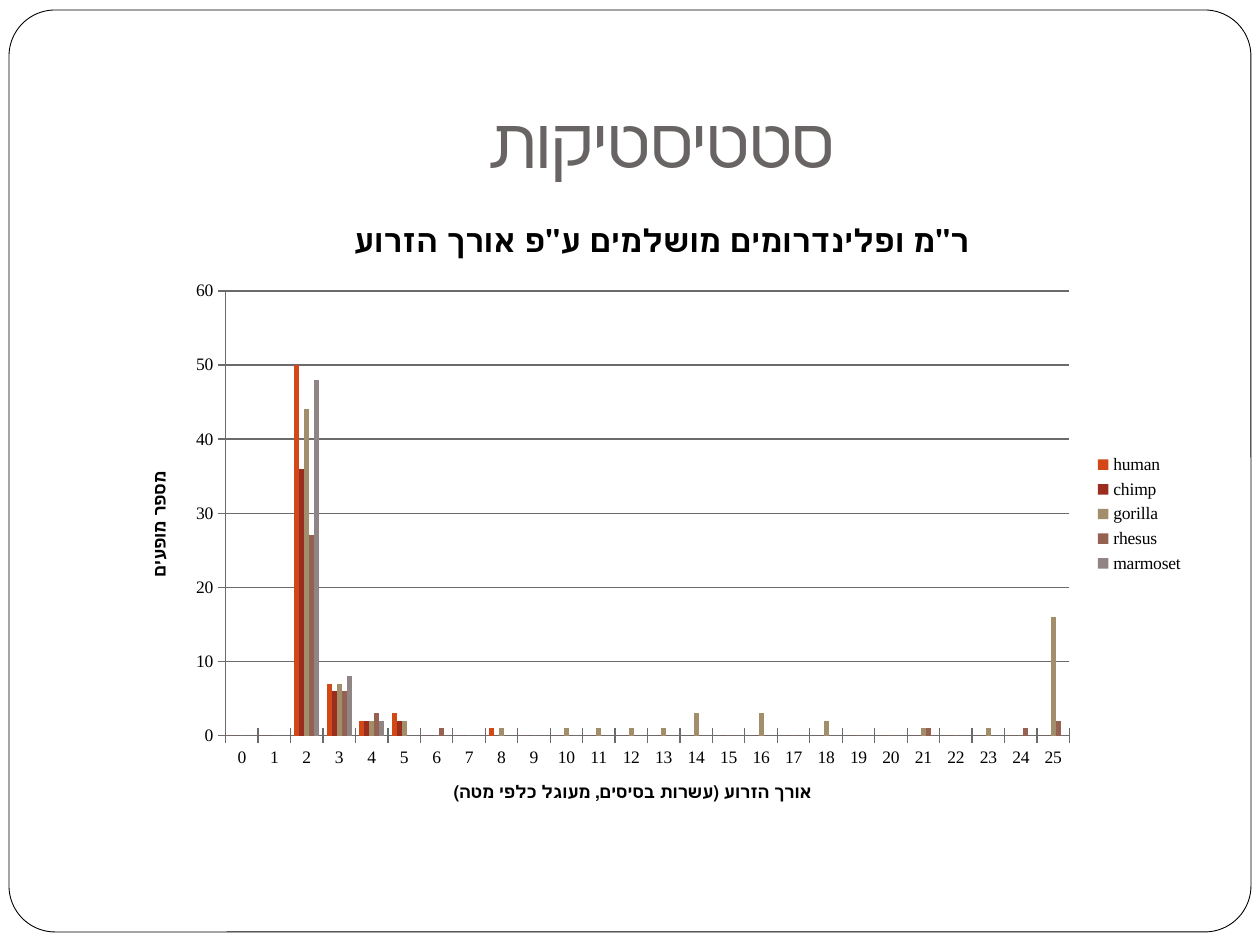
import pptx
import pptx.chart.data
import pptx.dml.color
import pptx.enum.chart
import pptx.enum.shapes
import pptx.enum.text
import pptx.oxml
import pptx.util

SCALE = 914400 / 126
COLORS = {
    "paper": "FFFFFF", "ink": "000000", "heading": "696464", "grid": "6B6B6B",
    "human": "D34817", "chimp": "9B2D1F", "gorilla": "A28E6A",
    "rhesus": "956251", "marmoset": "918485",
}
COUNTS = {
    "human": {2: 50, 3: 7, 4: 2, 5: 3, 8: 1},
    "chimp": {2: 36, 3: 6, 4: 2, 5: 2},
    "gorilla": {2: 44, 3: 7, 4: 2, 5: 2, 8: 1, 10: 1, 11: 1, 12: 1, 13: 1,
                14: 3, 16: 3, 18: 2, 21: 1, 23: 1, 25: 16},
    "rhesus": {2: 27, 3: 6, 4: 3, 6: 1, 21: 1, 24: 1, 25: 2},
    "marmoset": {2: 48, 3: 8, 4: 2},
}
LENGTHS = range(26)


def px(length):
    return pptx.util.Emu(round(length * SCALE))


def color(name):
    return pptx.dml.color.RGBColor.from_string(COLORS[name])


def style_text(para, size, font, ink, bold=False):
    para.font.size = pptx.util.Pt(size)
    para.font.name = font
    para.font.bold = bold
    para.font.color.rgb = color(ink)
    para._p.get_or_add_pPr().set("rtl", "1")


def add_frame(page, box):
    frame = page.shapes.add_shape(
        pptx.enum.shapes.MSO_SHAPE.ROUNDED_RECTANGLE, *map(px, box))
    frame.adjustments[0] = 0.05
    frame.shadow.inherit = False
    frame.fill.solid()
    frame.fill.fore_color.rgb = color("paper")
    frame.line.color.rgb = color("ink")
    frame.line.width = pptx.util.Pt(0.5)


def add_heading(page, box, text):
    frame = page.shapes.add_textbox(*map(px, box)).text_frame
    frame.word_wrap = True
    frame.vertical_anchor = pptx.enum.text.MSO_ANCHOR.BOTTOM
    frame.margin_bottom = pptx.util.Inches(0.1)
    para = frame.paragraphs[0]
    para.text = text
    para.alignment = pptx.enum.text.PP_ALIGN.CENTER
    style_text(para, 40, "Cabin", "heading")


def set_title(owner, text, size):
    frame = (owner.chart_title if hasattr(owner, "chart_title") else owner.axis_title).text_frame
    frame.text = text
    style_text(frame.paragraphs[0], size, "Times New Roman", "ink", True)


def place_plot(chart, box, plot_box):
    left, top, width, height = box
    fractions = zip("xywh", ((plot_box[0] - left) / width, (plot_box[1] - top) / height,
                             plot_box[2] / width, plot_box[3] / height))
    sizes = "".join(f'<c:{key} val="{value:.3f}"/>' for key, value in fractions)
    layout = pptx.oxml.parse_xml(
        '<c:layout xmlns:c="http://schemas.openxmlformats.org/drawingml/2006/chart">'
        '<c:manualLayout><c:layoutTarget val="inner"/><c:xMode val="edge"/>'
        f'<c:yMode val="edge"/>{sizes}</c:manualLayout></c:layout>')
    area = chart._chartSpace.chart.plotArea
    for old in area.findall(layout.tag):
        area.remove(old)
    area.insert(0, layout)


def add_counts_chart(page, box):
    data = pptx.chart.data.CategoryChartData()
    data.categories = [str(length) for length in LENGTHS]
    for name, counts in COUNTS.items():
        data.add_series(name, [counts.get(length, 0) for length in LENGTHS])
    chart = page.shapes.add_chart(
        pptx.enum.chart.XL_CHART_TYPE.COLUMN_CLUSTERED, *map(px, box), data).chart
    chart.font.size = pptx.util.Pt(10)
    chart.font.name = "Times New Roman"
    chart.font.color.rgb = color("ink")
    set_title(chart, 'ר"מ ופלינדרומים מושלמים ע"פ אורך הזרוע', 18)
    chart.has_legend = True
    chart.legend.position = pptx.enum.chart.XL_LEGEND_POSITION.RIGHT
    chart.legend.include_in_layout = False

    plot = chart.plots[0]
    plot.vary_by_categories = False
    plot.gap_width = 150
    plot.overlap = 0
    for series in plot.series:
        series.format.fill.solid()
        series.format.fill.fore_color.rgb = color(series.name)

    titles = ((chart.category_axis, "אורך הזרוע (עשרות בסיסים, מעוגל כלפי מטה)"),
              (chart.value_axis, "מספר מופעים"))
    for axis, text in titles:
        set_title(axis, text, 10)
        axis.major_tick_mark = pptx.enum.chart.XL_TICK_MARK.CROSS
        axis.format.line.color.rgb = color("grid")
    values = chart.value_axis
    values.minimum_scale, values.maximum_scale, values.major_unit = 0, 60, 10
    values.has_major_gridlines = True
    values.major_gridlines.format.line.color.rgb = color("grid")
    place_plot(chart, box, (226, 291, 844, 445))


def main():
    deck = pptx.Presentation()
    deck.slide_width, deck.slide_height = px(1260), px(945)
    page = deck.slides.add_slide(deck.slide_layouts[6])
    add_frame(page, (9, 10, 1242, 922))
    add_heading(page, (126, 38, 1071, 157), "סטטיסטיקות")
    add_counts_chart(page, (126, 199, 1071, 630))
    deck.save("out.pptx")


if __name__ == "__main__":
    main()
